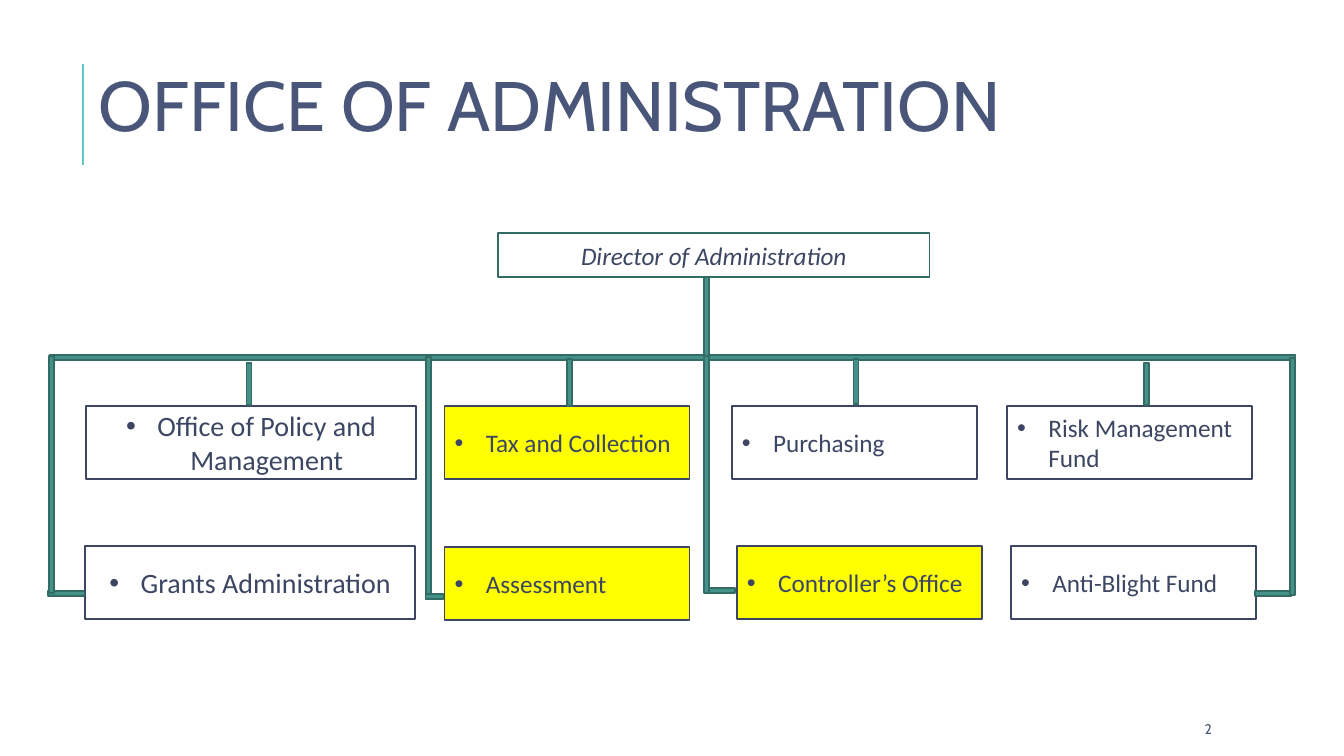
from pptx import Presentation
from pptx.util import Inches, Pt
from pptx.dml.color import RGBColor
from pptx.enum.shapes import MSO_SHAPE, MSO_CONNECTOR
from pptx.enum.text import PP_ALIGN, MSO_ANCHOR
from pptx.oxml.ns import qn
from lxml import etree

# Content
TITLE = "OFFICE OF ADMINISTRATION"
HEAD = "Director of Administration"
PAGE = "2"
# Each unit: name, left, top, highlighted
WIDE = [
    ("Office of Policy and Management", 0.85, 4.03, False),
    ("Grants Administration", 0.84, 5.42, False),
]
UNITS = [
    ("Tax and Collection", 4.41, 4.03, True),
    ("Purchasing", 7.26, 4.03, False),
    ("Risk Management Fund", 9.99, 4.03, False),
    ("Assessment", 4.41, 5.43, True),
    ("Controller’s Office", 7.31, 5.42, True),
    ("Anti-Blight Fund", 10.03, 5.42, False),
]
# Upright bars: centre x, top, length
TRUNK = (7.01, 2.75, 0.84)
DROPS = [(2.47, 3.6, 0.42), (5.65, 3.56, 0.47), (8.49, 3.56, 0.45), (11.37, 3.6, 0.42)]
SIDES = [(0.51, 3.53), (4.25, 3.54), (7.01, 3.53), (12.82, 3.55)]
# Level bars: left, top, length
RAIL = (0.49, 3.52, 12.36)
FEET = [(0.48, 5.86, 0.36), (4.22, 5.89, 0.18), (7.03, 5.83, 0.26), (12.45, 5.86, 0.36)]
BAR, SIDE, TALL = 0.05, 2.35, 0.72

COLORS = {"title": "495579", "ink": "3C4663", "edge": "336B65", "bar": "459088",
          "accent": "62C7CD", "white": "FFFFFF", "mark": "FFFF00"}


def color(name):
    return RGBColor.from_string(COLORS[name])


def write(shape, text, size=18, font="Calibri", ink="ink", align=PP_ALIGN.LEFT,
          italic=None, bullet=False, spacing=None):
    frame = shape.text_frame
    frame.word_wrap = True
    frame.vertical_anchor = MSO_ANCHOR.MIDDLE
    para = frame.paragraphs[0]
    para.alignment = align
    para.line_spacing = spacing
    run = para.add_run()
    run.text = text
    run.font.size, run.font.name, run.font.italic = Pt(size), font, italic
    run.font.color.rgb = color(ink)
    if bullet:
        props = para._p.get_or_add_pPr()
        props.set("marL", str(Inches(0.31)))
        props.set("indent", str(Inches(-0.31)))
        etree.SubElement(props, qn("a:buFont")).set("typeface", "Arial")
        etree.SubElement(props, qn("a:buChar")).set("char", "•")


def rect(left, top, width, height, fill="white", edge="ink"):
    shape = slide.shapes.add_shape(MSO_SHAPE.RECTANGLE, Inches(left), Inches(top),
                                   Inches(width), Inches(height))
    shape.shadow.inherit = False
    shape.fill.solid()
    shape.fill.fore_color.rgb = color(fill)
    shape.line.color.rgb = color(edge)
    shape.line.width = Pt(1.25)
    return shape


def label(left, top, width, height, text, **style):
    box = slide.shapes.add_textbox(Inches(left), Inches(top), Inches(width), Inches(height))
    write(box, text, font="Cabin", ink="title", **style)


deck = Presentation()
deck.slide_width, deck.slide_height = Inches(13.33), Inches(7.5)
slide = deck.slides.add_slide(deck.slide_layouts[6])

# Title, accent line and page number
rule = slide.shapes.add_connector(MSO_CONNECTOR.STRAIGHT, Inches(0.82), Inches(1.64),
                                  Inches(0.82), Inches(0.64))
rule.line.color.rgb = color("accent")
rule.line.width = Pt(1.5)
etree.SubElement(rule._element.spPr, qn("a:effectLst"))
label(0.88, 0.28, 10.63, 1.64, TITLE, size=50, spacing=0.8)
label(11.85, 7.08, 1.06, 0.3, PAGE, size=10)

# Director and units
write(rect(4.94, 2.31, 4.28, 0.44, edge="edge"), HEAD, align=PP_ALIGN.CENTER, italic=True)
for group, width, size, align in ((WIDE, 3.28, 20, PP_ALIGN.CENTER),
                                  (UNITS, 2.43, 18, PP_ALIGN.LEFT)):
    for name, left, top, marked in group:
        box = rect(left, top, width, TALL, fill="mark" if marked else "white")
        write(box, name, size=size, align=align, bullet=True)

# Bars joining the units
uprights = [TRUNK, *DROPS, *((mid, top, SIDE) for mid, top in SIDES)]
bars = [(left, top, size, BAR) for left, top, size in [RAIL, *FEET]]
bars += [(mid - BAR / 2, top, BAR, size) for mid, top, size in uprights]
for bar in bars:
    rect(*bar, fill="bar", edge="edge")

deck.save("out.pptx")
